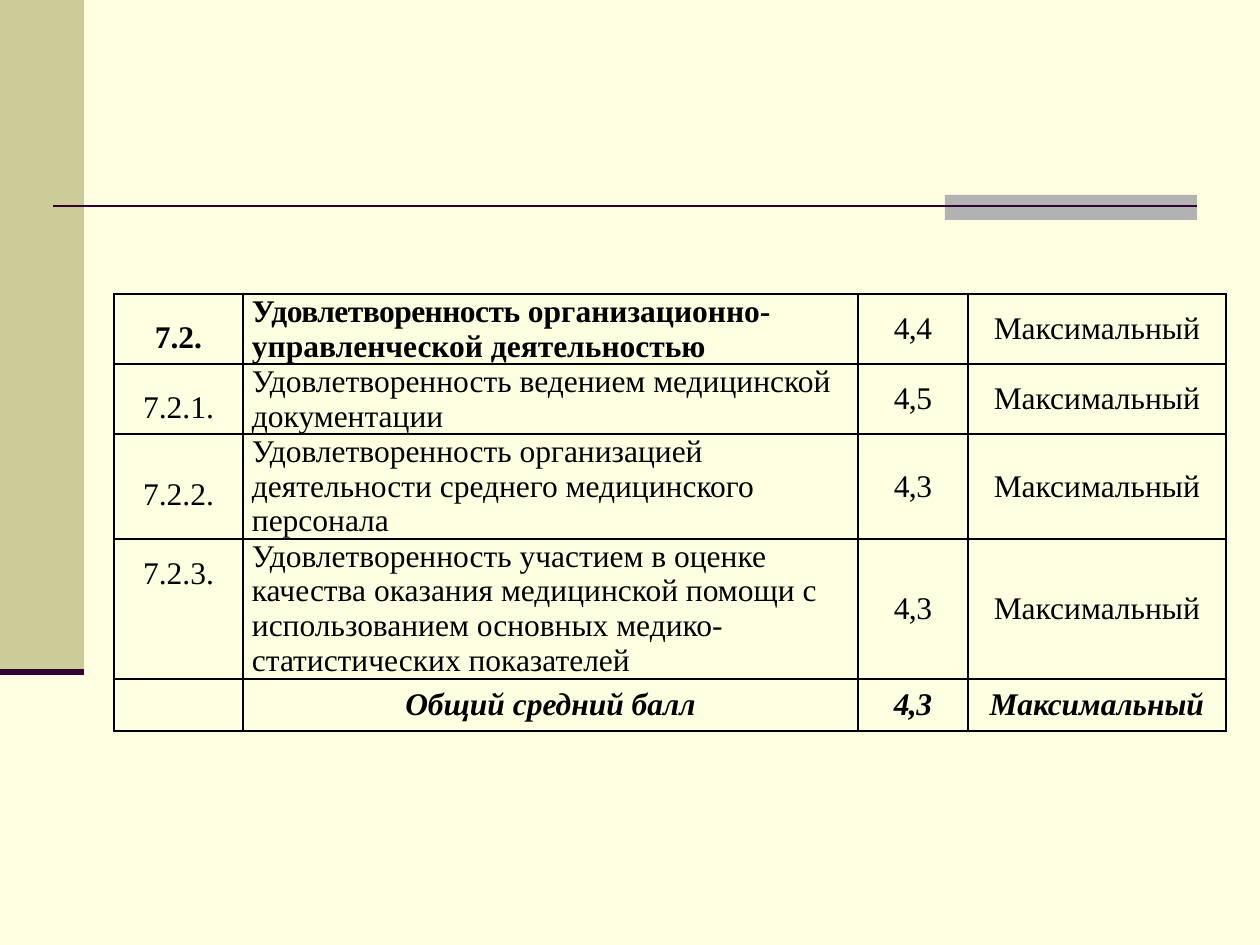
from dataclasses import dataclass

from lxml import etree
from pptx import Presentation
from pptx.dml.color import RGBColor
from pptx.enum.shapes import MSO_CONNECTOR, MSO_SHAPE
from pptx.enum.text import MSO_ANCHOR, PP_ALIGN
from pptx.oxml.ns import qn
from pptx.util import Emu, Pt

RECT = MSO_SHAPE.RECTANGLE
LINE = MSO_CONNECTOR.STRAIGHT
TOP, MID = MSO_ANCHOR.TOP, MSO_ANCHOR.MIDDLE
LEFT, MIDDLE = PP_ALIGN.LEFT, PP_ALIGN.CENTER
SCALE = 914400 / 126


def px(num):
    return Emu(round(num * SCALE))


def rgb(code):
    return RGBColor.from_string(code)


def apply(item, vals):
    for name, val in vals.items():
        setattr(item, name, val)


@dataclass(frozen=True)
class Theme:
    back: str = "FFFFE1"
    side: str = "CCCC99"
    tab: str = "B2B2B2"
    rule: str = "330033"
    ink: str = "000000"
    font: str = "Times New Roman"
    size: int = 18
    edge: int = 1
    tight: int = -30


class Deck:
    def __init__(self, theme):
        self.theme = theme
        self.show = Presentation()
        apply(self.show, {"slide_width": px(1260), "slide_height": px(945)})
        self.slide = self.show.slides.add_slide(self.show.slide_layouts[6])
        fill = self.slide.background.fill
        fill.solid()
        fill.fore_color.rgb = rgb(theme.back)

    def rect(self, x, y, wide, high, color):
        shape = self.slide.shapes.add_shape(RECT, px(x), px(y), px(wide), px(high))
        shape.shadow.inherit = False
        shape.fill.solid()
        shape.fill.fore_color.rgb = rgb(color)
        shape.line.fill.background()

    def line(self, x, y, end, width):
        rule = self.slide.shapes.add_connector(LINE, px(x), px(y), px(end), px(y))
        rule.line.color.rgb = rgb(self.theme.rule)
        rule.line.width = Pt(width)
        etree.SubElement(rule._element.spPr, qn("a:effectLst"))

    def border(self, cell):
        props = cell._tc.get_or_add_tcPr()
        for side in ("lnL", "lnR", "lnT", "lnB"):
            edge = etree.SubElement(props, qn(f"a:{side}"), w=str(Pt(self.theme.edge)))
            fill = etree.SubElement(edge, qn("a:solidFill"))
            etree.SubElement(fill, qn("a:srgbClr"), val=self.theme.ink)

    def text(self, cell, runs, align, space, bold, slant):
        para = cell.text_frame.paragraphs[0]
        apply(para, {"alignment": align, "line_spacing": space})
        for words, tight in runs:
            run = para.add_run()
            run.text = words
            apply(run.font, {"name": self.theme.font, "size": Pt(self.theme.size),
                             "bold": bold, "italic": slant})
            run.font.color.rgb = rgb(self.theme.ink)
            if tight:
                run._r.get_or_add_rPr().set("spc", str(self.theme.tight))

    def table(self, x, y, cols, highs, rows):
        frame = self.slide.shapes.add_table(
            len(highs), len(cols), px(x), px(y), px(sum(cols)), px(sum(highs)))
        grid = frame.table
        apply(grid, {"first_row": False, "horz_banding": False})
        for col, wide in zip(grid.columns, cols):
            col.width = px(wide)
        for row, high in zip(grid.rows, highs):
            row.height = px(high)
        last = len(rows) - 1
        for r, row in enumerate(rows):
            for c, runs in enumerate(row):
                cell = grid.cell(r, c)
                name = c == 1 and r < last
                high = name or (c == 0 and r == last - 1)
                apply(cell, {"margin_left": px(9), "margin_right": px(9),
                             "margin_top": 0, "margin_bottom": 0,
                             "vertical_anchor": TOP if high else MID})
                self.border(cell)
                cell.fill.background()
                self.text(cell, runs, LEFT if name else MIDDLE,
                          1.5 if c == 0 and r < last else 1.0,
                          r == last or (r == 0 and c < 2), r == last)


def main():
    deck = Deck(Theme())
    theme = deck.theme
    deck.rect(0, 0, 84, 672, theme.side)
    deck.rect(945, 195, 252, 25, theme.tab)
    deck.line(53, 206, 1197, 1.5)
    deck.line(0, 672, 84, 3.5)

    items = [
        ("7.2.", [("Удовлетворенность", True),
                  (" организационно-управленческой деятельностью", False)], "4,4"),
        ("7.2.1.", [("Удовлетворенность ведением медицинской документации", False)], "4,5"),
        ("7.2.2.", [("Удовлетворенность организацией деятельности среднего "
                     "медицинского персонала", False)], "4,3"),
        ("7.2.3.", [("Удовлетворенность участием в оценке качества оказания "
                     "медицинской помощи с использованием основных "
                     "медико-статистических показателей", False)], "4,3"),
        ("", [("Общий средний балл", False)], "4,3"),
    ]
    rows = [([(code, False)] if code else [], name, [(score, True)],
             [("Максимальный", False)]) for code, name, score in items]
    deck.table(114, 294, [129, 615, 110, 258], [70, 70, 105, 140, 52], rows)
    deck.show.save("out.pptx")


if __name__ == "__main__":
    main()
